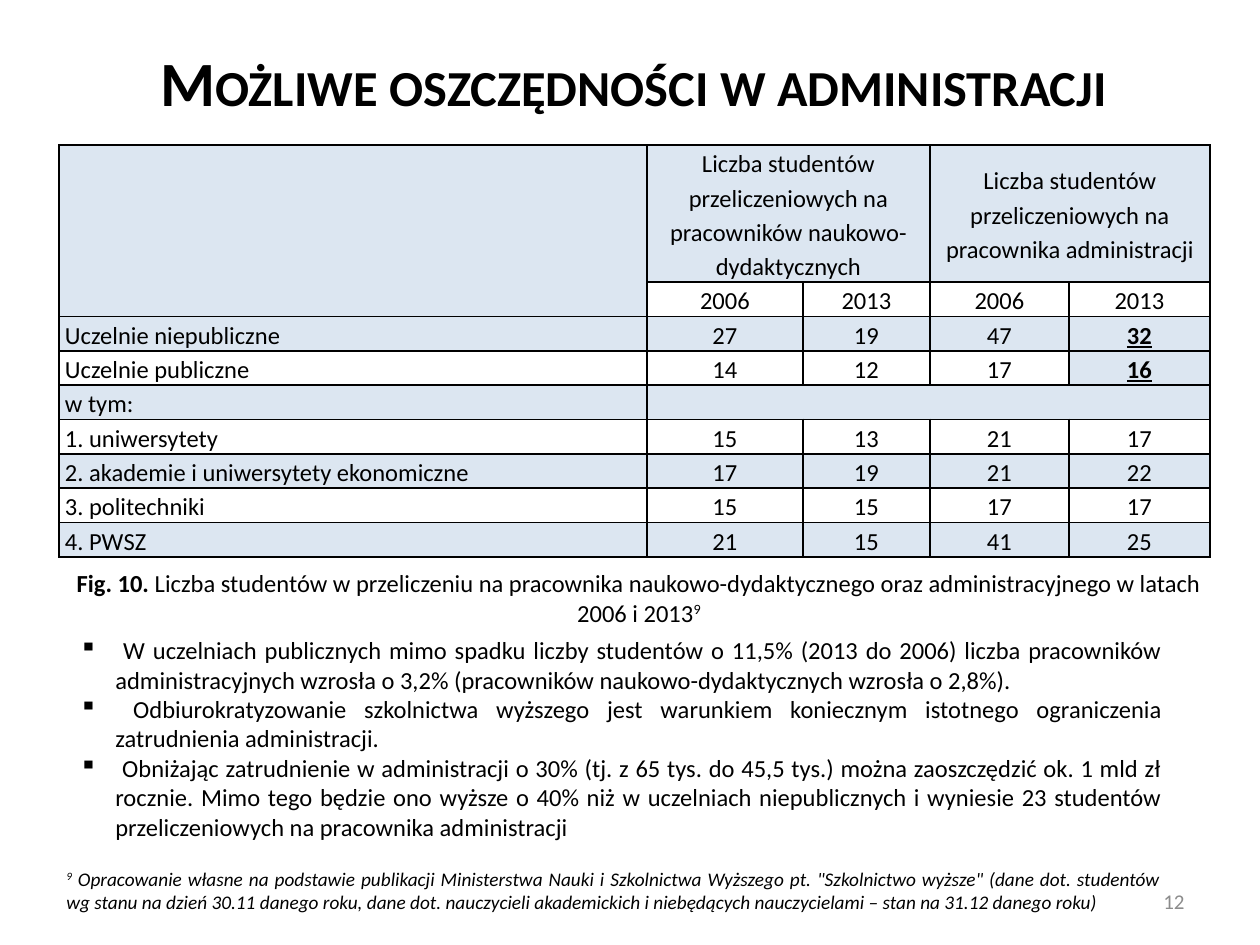
from lxml.etree import SubElement
from pptx import Presentation
from pptx.dml.color import RGBColor
from pptx.enum.text import MSO_ANCHOR as ANCHOR, PP_ALIGN as ALIGN
from pptx.oxml import parse_xml
from pptx.oxml.ns import nsdecls, qn
from pptx.util import Pt

PX = 7257.14  # EMU per px, 126 px to the inch
C = {"black": "000000", "gray": "8C8C8C", "band": "DCE6F1"}


def px(n):
    return round(n * PX)


def add_run(p, text, size=14, color="black", bold=False, italic=False, **attrs):
    r = p.add_run()
    r.text = text
    f = r.font
    f.name, f.size, f.bold, f.italic = "Calibri", Pt(size), bold, italic
    f.color.rgb = RGBColor.from_string(C[color])
    for name, value in attrs.items():
        r._r.get_or_add_rPr().set(name, value)


prs = Presentation()
prs.slide_width, prs.slide_height = px(1260), px(945)
s = prs.slides.add_slide(prs.slide_layouts[6])

# Table
head = "Liczba studentów przeliczeniowych na "
rows = [
    ["", head + "pracowników naukowo-dydaktycznych", "", head + "pracownika administracji", ""],
    ["", "2006", "2013", "2006", "2013"],
    ["Uczelnie niepubliczne", "27", "19", "47", "32"],
    ["Uczelnie publiczne", "14", "12", "17", "16"],
    ["w tym:", "", "", "", ""],
    ["1. uniwersytety", "15", "13", "21", "17"],
    ["2. akademie i uniwersytety ekonomiczne", "17", "19", "21", "22"],
    ["3. politechniki", "15", "15", "17", "17"],
    ["4. PWSZ", "21", "15", "41", "25"],
]
col_widths = [588, 156, 127, 139, 141]
row_heights = [137] + [34] * 8
key_cells = [(2, 4), (3, 4)]
table = s.shapes.add_table(len(rows), len(col_widths), px(59), px(145),
                           px(sum(col_widths)), px(sum(row_heights))).table
table.first_row = table.horz_banding = False
for col, w in zip(table.columns, col_widths):
    col.width = px(w)
for row, h in zip(table.rows, row_heights):
    row.height = px(h)

for i, values in enumerate(rows):
    for j, value in enumerate(values):
        cell = table.cell(i, j)
        cell.margin_left = cell.margin_right = px(6)
        cell.margin_top = cell.margin_bottom = 0
        cell.vertical_anchor = ANCHOR.MIDDLE if j else ANCHOR.BOTTOM
        if i % 2 == 0 or (i, j) in key_cells:
            cell.fill.solid()
            cell.fill.fore_color.rgb = RGBColor.from_string(C["band"])
        else:
            cell.fill.background()
        p = cell.text_frame.paragraphs[0]
        p.alignment = ALIGN.CENTER if j else ALIGN.LEFT
        p.line_spacing = 1.15
        if value:
            key = (i, j) in key_cells
            add_run(p, value, bold=key, u="sng" if key else "none")
        else:
            SubElement(p._p, qn("a:endParaRPr"), sz="1400")
        # Cell borders
        tcPr = cell._tc.get_or_add_tcPr()
        for k, side in enumerate("LRTB"):
            tcPr.insert(k, parse_xml(
                f'<a:ln{side} {nsdecls("a")} w="12700"><a:solidFill>'
                f'<a:srgbClr val="{C["black"]}"/></a:solidFill></a:ln{side}>'))

for first, last in [((0, 0), (1, 0)), ((0, 1), (0, 2)), ((0, 3), (0, 4)), ((4, 1), (4, 4))]:
    table.cell(*first).merge(table.cell(*last))

# Text boxes: box in px, alignment, anchor, bulleted, paragraphs of runs
texts = [
    # Title
    ((54, 37, 1160, 89), ALIGN.CENTER, ANCHOR.TOP, False,
     [[("Możliwe oszczędności w administracji", dict(size=36, bold=True, cap="small"))]]),
    # Caption
    ((64, 562, 1150, 72), ALIGN.CENTER, ANCHOR.TOP, False,
     [[("Fig. 10. ", dict(bold=True)),
       ("Liczba studentów w przeliczeniu na pracownika naukowo-dydaktycznego oraz "
        "administracyjnego w latach 2006 i 2013", {}),
       ("9", dict(baseline="30000"))]]),
    # Conclusions
    ((64, 629, 1111, 220), ALIGN.JUSTIFY, ANCHOR.TOP, True,
     [[(" W uczelniach publicznych mimo spadku liczby studentów o 11,5% (2013 do 2006) liczba "
        "pracowników administracyjnych wzrosła o 3,2% (pracowników naukowo-dydaktycznych "
        "wzrosła o 2,8%).", {})],
      [(" Odbiurokratyzowanie szkolnictwa wyższego jest warunkiem koniecznym istotnego "
        "ograniczenia zatrudnienia administracji.", {})],
      [(" Obniżając zatrudnienie w administracji o 30% (tj. z 65 tys. do 45,5 tys.) można "
        "zaoszczędzić ok. 1 mld zł rocznie. Mimo tego będzie ono wyższe o 40% niż w uczelniach "
        "niepublicznych i wyniesie 23 studentów przeliczeniowych na pracownika "
        "administracji", {})]]),
    # Footnote
    ((54, 861, 1120, 59), ALIGN.JUSTIFY, ANCHOR.TOP, False,
     [[("9", dict(size=11, italic=True, baseline="30000")),
       (" Opracowanie własne na podstawie publikacji Ministerstwa Nauki i Szkolnictwa Wyższego "
        'pt. "Szkolnictwo wyższe" (dane dot. studentów wg stanu na dzień 30.11 danego roku, '
        "dane dot. nauczycieli akademickich i niebędących nauczycielami – stan na 31.12 "
        "danego roku)", dict(size=11, italic=True))]]),
    # Page number
    ((903, 876, 294, 50), ALIGN.RIGHT, ANCHOR.MIDDLE, False,
     [[("12", dict(size=12, color="gray"))]]),
]
for box, align, anchor, bulleted, paragraphs in texts:
    tf = s.shapes.add_textbox(*map(px, box)).text_frame
    tf.word_wrap = True
    tf.vertical_anchor = anchor
    for n, runs in enumerate(paragraphs):
        p = tf.add_paragraph() if n else tf.paragraphs[0]
        p.alignment = align
        if bulleted:
            pPr = p._p.get_or_add_pPr()
            pPr.set("marL", str(px(39)))
            pPr.set("indent", str(-px(36)))
            SubElement(pPr, qn("a:buChar"), char="▪")
        for text, style in runs:
            add_run(p, text, **style)

prs.save("out.pptx")
